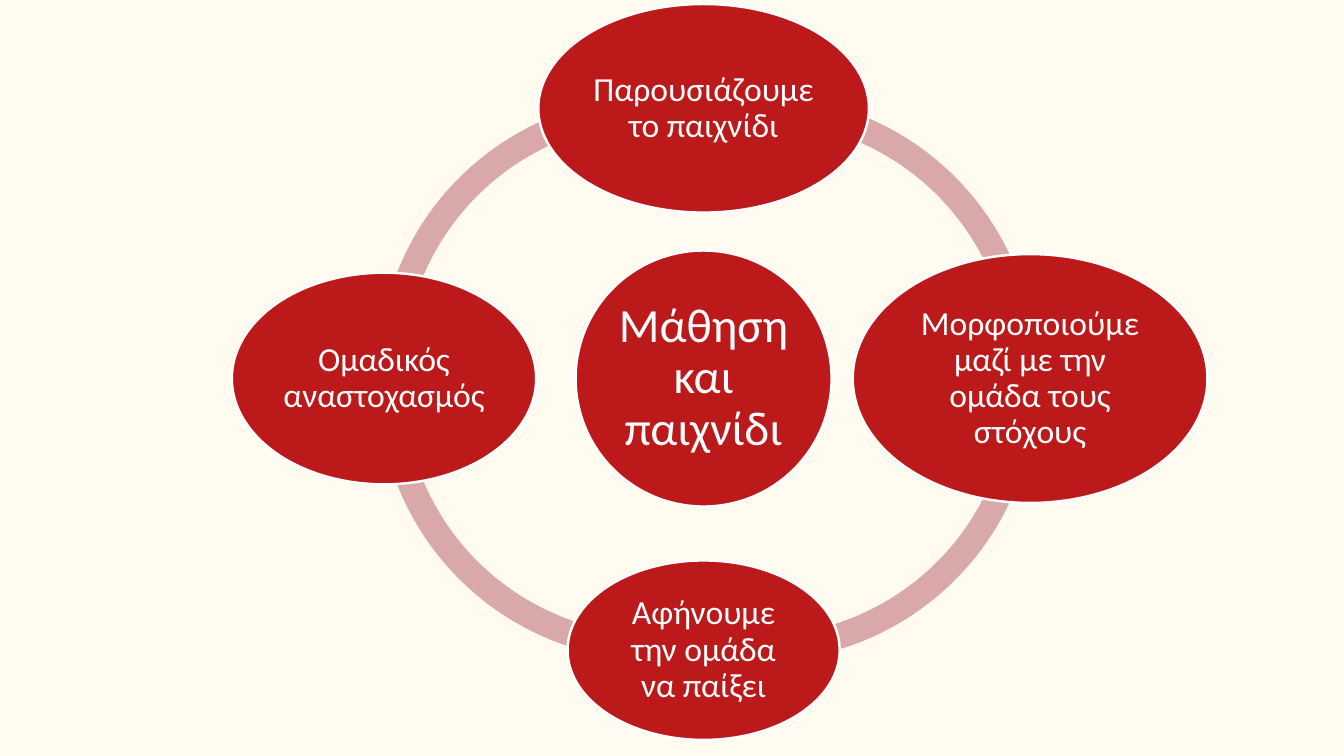
import pptx
import pptx.util
import pptx.dml.color
import pptx.enum.shapes
import pptx.enum.text

Pt = pptx.util.Pt
SHAPE = pptx.enum.shapes.MSO_SHAPE
RED, ROSE, WHITE, CREAM = "BC191B", "D9A9A9", "FFFFFF", "FFFBF0"
MID_X, MID_Y = 502.6, 270.4
RING, BAND = 396, 0.046

ARCS = [
    (270, 69.1, 179.26, 280.22),
    (270, 75.6, 79.77, 181.08),
    (344.2, 76.3, 358.6, 101.91),
    (344.2, 68.4, 258.1, 1.06),
]
STEPS = [
    (MID_X, 77.4, 236.2, 149, [("Παρουσιάζουμε το παιχνίδι", 24)]),
    (735.8, MID_Y, 253.4, 177.8,
     [("Μορφοποιούμε μαζί με την ομάδα τους στόχους", 24)]),
    (MID_X, 464.4, 194.4, 128.2,
     [("Αφήνουμε", 24), (" ", 14), ("την ομάδα να παίξει", 24)]),
    (274.3, MID_Y, 217.4, 151.2, [("Ομαδικός αναστοχασμός", 24)]),
]


def paint(fill, color):
    """Give a fill one solid colour."""
    fill.solid()
    fill.fore_color.rgb = pptx.dml.color.RGBColor.from_string(color)


def write(para, text, size=24, color=WHITE, font="Calibri"):
    """Add a run of text to a paragraph."""
    run = para.add_run()
    run.text = text
    run.font.size = Pt(size)
    run.font.name = font
    paint(run.font.fill, color)


def draw(slide, kind, left, top, width, height, color):
    """Add a flat shape with a plain fill."""
    shape = slide.shapes.add_shape(
        kind, Pt(left), Pt(top), Pt(width), Pt(height))
    shape.shadow.inherit = False
    paint(shape.fill, color)
    return shape


def add_arc(slide, left, top, start, end):
    """Add one part of the ring, with its angles in degrees."""
    arc = draw(slide, SHAPE.BLOCK_ARC, left, top, RING, RING, ROSE)
    arc.line.fill.background()
    for index, value in enumerate((start * 0.6, end * 0.6, BAND)):
        arc.adjustments[index] = value


def add_oval(slide, mid_x, mid_y, width, height, parts, inset=2.4):
    """Add a red oval around its midpoint with centred text."""
    oval = draw(slide, SHAPE.OVAL, mid_x - width / 2, mid_y - height / 2,
                width, height, RED)
    paint(oval.line.fill, WHITE)
    oval.line.width = Pt(1.75)
    frame = oval.text_frame
    frame.word_wrap = True
    frame.vertical_anchor = pptx.enum.text.MSO_ANCHOR.MIDDLE
    frame.margin_left = frame.margin_right = Pt(inset)
    frame.margin_top = frame.margin_bottom = Pt(inset)
    para = frame.paragraphs[0]
    para.alignment = pptx.enum.text.PP_ALIGN.CENTER
    para.line_spacing = 0.9
    for text, size in parts:
        write(para, text, size=size)


def main():
    """Build the slide and save it."""
    deck = pptx.Presentation()
    deck.slide_width, deck.slide_height = Pt(960), Pt(540)
    slide = deck.slides.add_slide(deck.slide_layouts[6])
    paint(slide.background.fill, CREAM)
    for arc in ARCS:
        add_arc(slide, *arc)
    add_oval(slide, MID_X, MID_Y, 182.9, 182.9,
             [("Μάθηση και παιχνίδι", 34)], inset=3.6)
    for step in STEPS:
        add_oval(slide, *step)
    deck.save("out.pptx")


if __name__ == "__main__":
    main()
